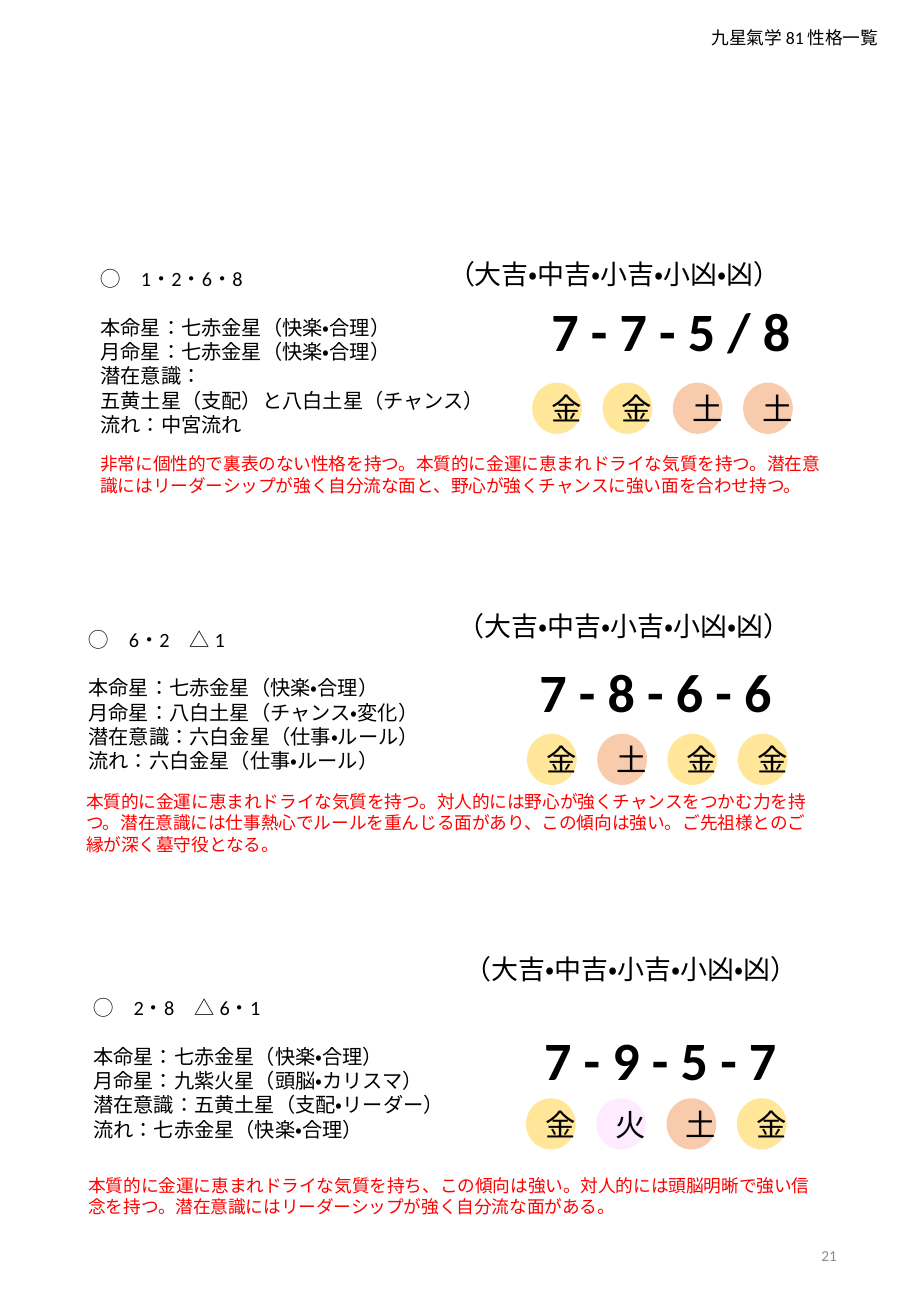
"""Build a page of three nine-star character readings."""
from pptx import Presentation
from pptx import util as u
from pptx.dml.color import RGBColor
from pptx.enum import lang, shapes, text

HUES = {"ink": "000000", "red": "FF0000", "grey": "8C8C8C",
        "金": "FFE699", "土": "F8CBAD", "火": "FEEBFF"}
LUCK = "（大吉・中吉・小吉・小凶・凶）"
LOOKS = {
    "head": {"size": u.Pt(10.5)},
    "note": {"size": u.Pt(12)},
    "code": {"size": u.Pt(32), "bold": True},
    "star": {"size": u.Pt(18)},
    "luck": {"size": u.Pt(16)},
    "page": {"size": u.Pt(9)},
}


def write(shape, lines, look, hue="ink"):
    frame = shape.text_frame
    frame.word_wrap = True
    for i, line in enumerate(lines):
        para = frame.paragraphs[0] if i == 0 else frame.add_paragraph()
        run = para.add_run()
        run.text = line
        run.font.name = "Calibri"
        run.font.language_id = lang.MSO_LANGUAGE_ID.JAPANESE
        run.font.color.rgb = RGBColor.from_string(HUES[hue])
        for key, value in LOOKS[look].items():
            setattr(run.font, key, value)
    return frame


def label(home, box, lines, look, hue="ink"):
    shape = home.shapes.add_textbox(*map(u.Cm, box))
    return write(shape, lines, look, hue)


deck = Presentation()
deck.slide_width, deck.slide_height = u.Cm(19.05), u.Cm(27.51)
slide = deck.slides.add_slide(deck.slide_layouts[6])

label(slide, (14.63, 0.43, 4.06, 0.71), ["九星氣学 81 性格一覧"], "head")
page = label(slide, (13.46, 25.5, 4.29, 1.47), ["21"], "page", "grey")
page.vertical_anchor = text.MSO_ANCHOR.MIDDLE
page.paragraphs[0].alignment = text.PP_ALIGN.RIGHT

readings = [
    {"note": (1.85, 5.44, 9.27, 3.84), "stars": (11.13, 8), "luck": (9.12, 5.26),
     "trait": (1.85, 9.35, 15.9, 1.14), "code": "7 - 7 - 5 / 8", "signs": "金金土土",
     "lines": ["◯　1・2・6・8", "本命星：七赤金星（快楽・合理）",
               "月命星：七赤金星（快楽・合理）", "潜在意識：",
               "五黄土星（支配）と八白土星（チャンス）", "流れ：中宮流れ"],
     "text": "非常に個性的で裏表のない性格を持つ。本質的に金運に恵まれドライな気質を持つ。"
             "潜在意識にはリーダーシップが強く自分流な面と、野心が強くチャンスに強い面を合わせ持つ。"},
    {"note": (1.6, 12.98, 8.36, 3.33), "stars": (11.02, 15.34), "luck": (9.32, 12.62),
     "trait": (1.55, 16.41, 15.9, 1.6), "code": "7 - 8 - 6 - 6", "signs": "金土金金",
     "lines": ["◯　6・2　△ 1", "本命星：七赤金星（快楽・合理）",
               "月命星：八白土星（チャンス・変化）",
               "潜在意識：六白金星（仕事・ルール）", "流れ：六白金星（仕事・ルール）"],
     "text": "本質的に金運に恵まれドライな気質を持つ。対人的には野心が強くチャンスをつかむ力を持つ。"
             "潜在意識には仕事熱心でルールを重んじる面があり、この傾向は強い。"
             "ご先祖様とのご縁が深く墓守役となる。"},
    {"note": (1.7, 20.68, 8.53, 3.33), "stars": (11, 22.96), "luck": (9.47, 19.79),
     "trait": (1.6, 24.43, 15.9, 1.14), "code": "7 - 9 - 5 - 7", "signs": "金火土金",
     "lines": ["◯　2・8　△ 6・1", "本命星：七赤金星（快楽・合理）",
               "月命星：九紫火星（頭脳・カリスマ）",
               "潜在意識：五黄土星（支配・リーダー）", "流れ：七赤金星（快楽・合理）"],
     "text": "本質的に金運に恵まれドライな気質を持ち、この傾向は強い。"
             "対人的には頭脳明晰で強い信念を持つ。"
             "潜在意識にはリーダーシップが強く自分流な面がある。"},
]

for item in readings:
    group = slide.shapes.add_group_shape()
    note = label(group, item["note"], item["lines"], "note")
    note.paragraphs[0].space_after = u.Pt(14.5)
    left, top = item["note"][:2]
    label(group, (left + 9.43, top + 0.66, 6.4, 1.63), [item["code"]], "code")
    left, top = item["stars"]
    for i, sign in enumerate(item["signs"]):
        box = (left + 1.47 * i, top, 1.04, 1.07)
        star = group.shapes.add_shape(shapes.MSO_SHAPE.OVAL, *map(u.Cm, box))
        star.shadow.inherit = False
        star.fill.solid()
        star.fill.fore_color.rgb = RGBColor.from_string(HUES[sign])
        star.line.fill.background()
        frame = write(star, [sign], "star")
        frame.vertical_anchor = text.MSO_ANCHOR.MIDDLE
        frame.paragraphs[0].alignment = text.PP_ALIGN.CENTER
    label(group, item["trait"], [item["text"]], "head", "red")
    label(group, (*item["luck"], 9.07, 0.94), [LUCK], "luck")

deck.save("out.pptx")
